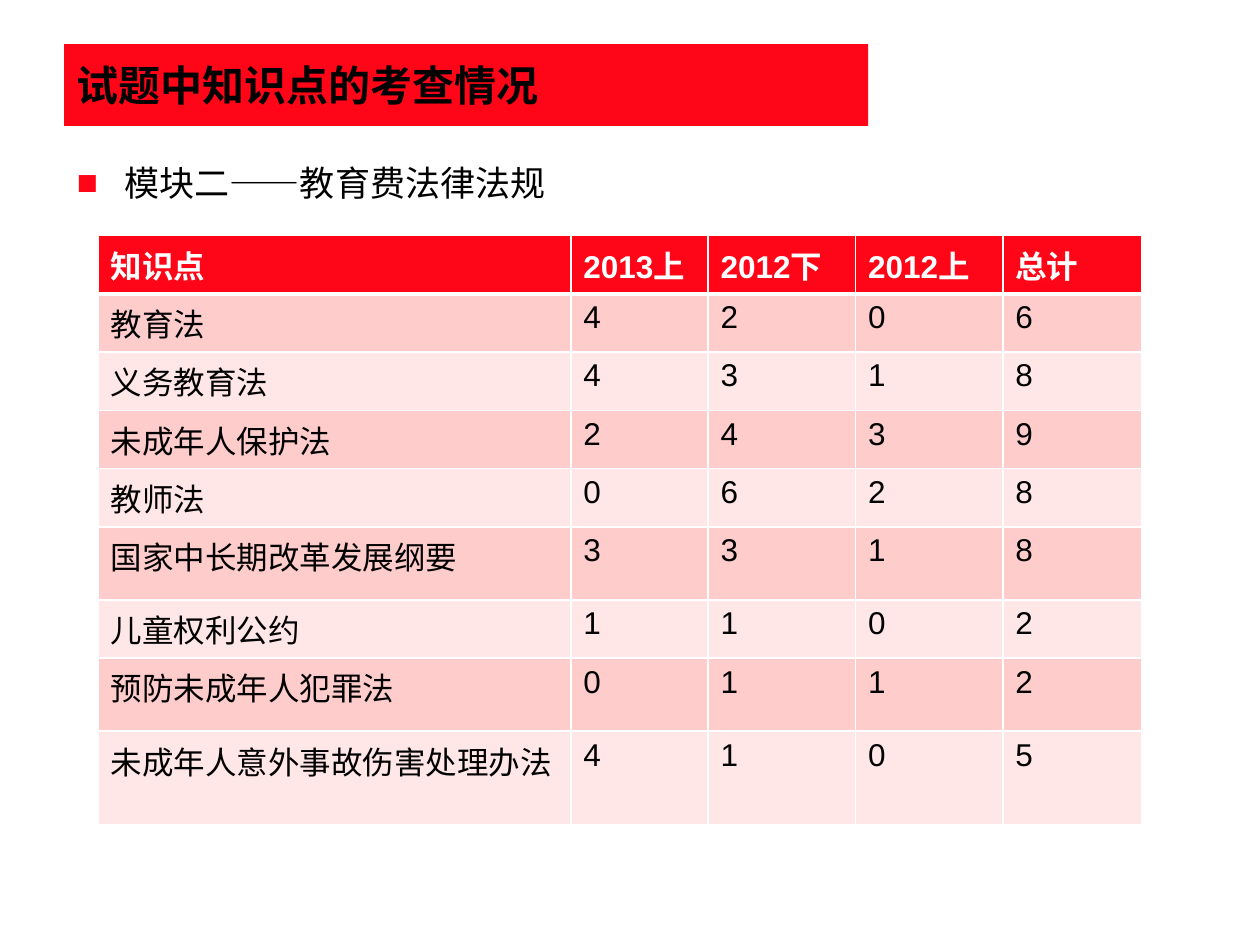
from lxml import etree
from pptx import Presentation
from pptx.dml.color import RGBColor
from pptx.enum import text
from pptx.oxml.ns import qn
from pptx.util import Inches, Pt

RED = RGBColor(0xFF, 0x05, 0x17)
PINK = RGBColor(0xFF, 0xCC, 0xCC)
PALE = RGBColor(0xFF, 0xE7, 0xE8)
BLACK = RGBColor(0, 0, 0)
WHITE = RGBColor(0xFF, 0xFF, 0xFF)

COLS = [3.75, 1.09, 1.17, 1.17, 1.1]
HEAD = ["知识点", "2013上", "2012下", "2012上", "总计"]
ROWS = [
    (0.43, "教育法", 4, 2, 0, 6),
    (0.43, "义务教育法", 4, 3, 1, 8),
    (0.43, "未成年人保护法", 2, 4, 3, 9),
    (0.43, "教师法", 0, 6, 2, 8),
    (0.58, "国家中长期改革发展纲要", 3, 3, 1, 8),
    (0.43, "儿童权利公约", 1, 1, 0, 2),
    (0.58, "预防未成年人犯罪法", 0, 1, 1, 2),
    (0.74, "未成年人意外事故伤害处理办法", 4, 1, 0, 5),
]


def place(shape, left, top, width, height):
    shape.left, shape.top = Inches(left), Inches(top)
    shape.width, shape.height = Inches(width), Inches(height)


def style(para, size, color, bold=False):
    for run in para.runs:
        font = run.font
        font.name, font.size, font.bold = "Arial", Pt(size), bold
        font.color.rgb = color


def add_title(slide, words):
    title = slide.shapes.title
    place(title, 0.51, 0.35, 6.38, 0.65)
    title.fill.solid()
    title.fill.fore_color.rgb = RED
    frame = title.text_frame
    frame.text = words
    frame.auto_size = text.MSO_AUTO_SIZE.NONE
    frame.vertical_anchor = text.MSO_ANCHOR.MIDDLE
    para = frame.paragraphs[0]
    para.alignment = text.PP_ALIGN.LEFT
    style(para, 24, BLACK, True)


def add_bullet(para):
    props = para._p.get_or_add_pPr()
    props.set("marL", str(Inches(0.38)))
    props.set("indent", str(-Inches(0.38)))
    color = etree.SubElement(props, qn("a:buClr"))
    etree.SubElement(color, qn("a:srgbClr"), val=str(RED))
    etree.SubElement(props, qn("a:buFont"), typeface="Arial")
    etree.SubElement(props, qn("a:buChar"), char="■")


def add_body(slide, words):
    body = slide.placeholders[1]
    place(body, 0.51, 1.23, 8.98, 5.47)
    frame = body.text_frame
    frame.text = words
    frame.auto_size = text.MSO_AUTO_SIZE.NONE
    para = frame.paragraphs[0]
    para.space_before = Pt(0)
    add_bullet(para)
    style(para, 20, BLACK)


def add_borders(cell, top, bottom):
    props = cell._tc.get_or_add_tcPr()
    for side, width in zip("LRTB", (1, 1, top, bottom)):
        line = etree.SubElement(props, qn(f"a:ln{side}"), w=str(Pt(width)))
        fill = etree.SubElement(line, qn("a:solidFill"))
        etree.SubElement(fill, qn("a:srgbClr"), val=str(WHITE))


def fill_row(table, row, height, words):
    table.rows[row].height = Inches(height)
    head = row == 0
    shade = RED if head else PINK if row % 2 else PALE
    for cell, word in zip(table.rows[row].cells, words):
        cell.text = str(word)
        style(cell.text_frame.paragraphs[0], 18, WHITE if head else BLACK, head)
        add_borders(cell, 3 if row == 1 else 1, 3 if head else 1)
        cell.fill.solid()
        cell.fill.fore_color.rgb = shade


def add_grid(slide):
    frame = slide.shapes.add_table(
        len(ROWS) + 1, len(COLS), Inches(0.78), Inches(1.87), Inches(8.28), Inches(4.5))
    table = frame.table
    for col, width in zip(table.columns, COLS):
        col.width = Inches(width)
    fill_row(table, 0, 0.43, HEAD)
    for row, (height, *words) in enumerate(ROWS, 1):
        fill_row(table, row, height, words)


def main():
    deck = Presentation()
    deck.slide_width, deck.slide_height = Inches(10), Inches(7.5)
    slide = deck.slides.add_slide(deck.slide_layouts[1])
    add_title(slide, "试题中知识点的考查情况")
    add_body(slide, "模块二——教育费法律法规")
    add_grid(slide)
    deck.save("out.pptx")


if __name__ == "__main__":
    main()
